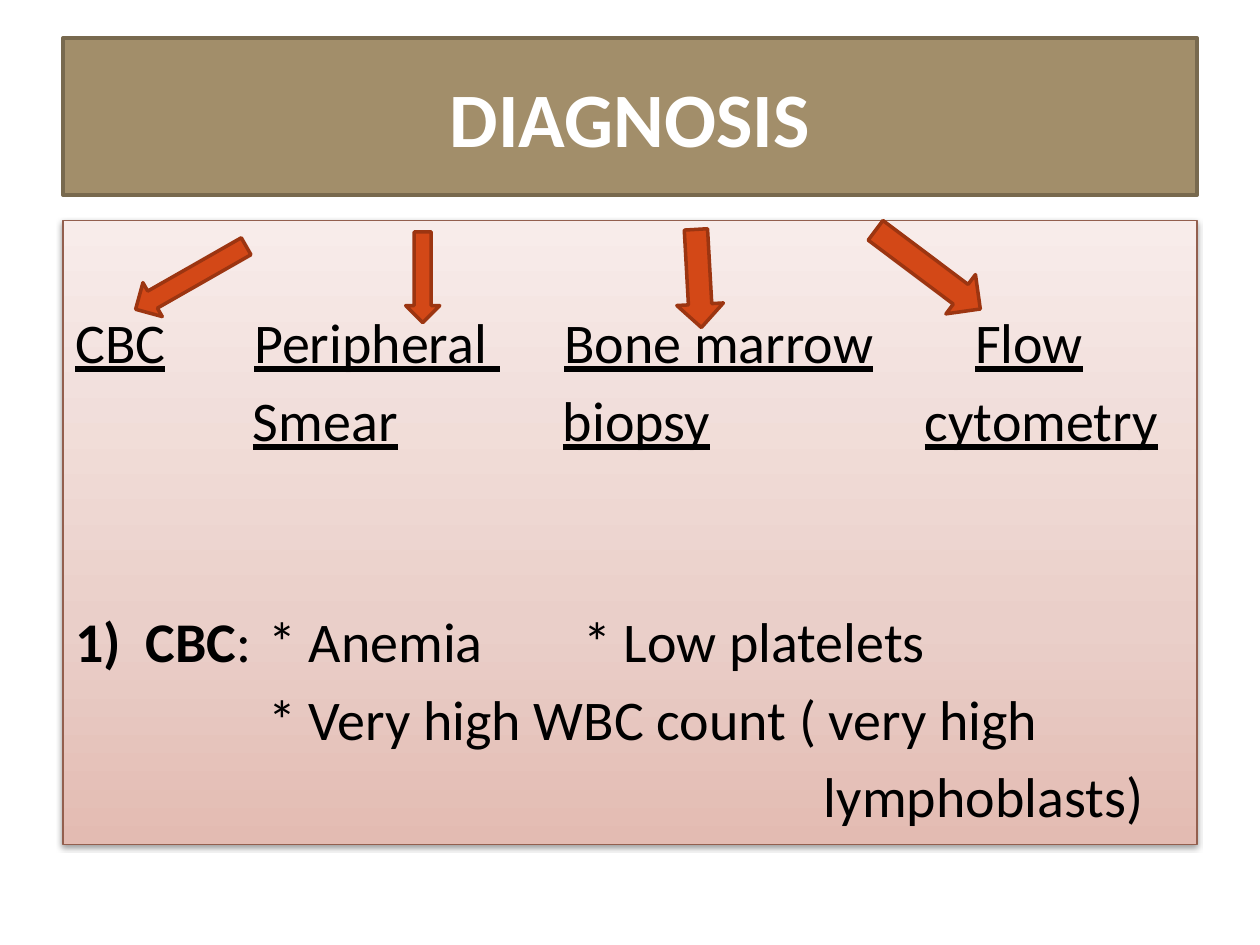
from lxml.etree import SubElement
from pptx import Presentation
from pptx.dml.color import RGBColor
from pptx.enum.shapes import MSO_SHAPE
from pptx.enum.text import MSO_ANCHOR, PP_ALIGN
from pptx.oxml.ns import qn
from pptx.util import Emu, Inches, Pt

TAN = RGBColor(0xA2, 0x8E, 0x6A)
BROWN = RGBColor(0x78, 0x69, 0x4E)
RUST = RGBColor(0x93, 0x5F, 0x4E)
ORANGE = RGBColor(0xD3, 0x48, 0x17)
BRICK = RGBColor(0x9C, 0x35, 0x11)
WHITE = RGBColor(0xFF, 0xFF, 0xFF)
BLACK = RGBColor(0, 0, 0)
BLUSH = [
    (0, RGBColor(0xE3, 0xBB, 0xB2)),
    (35, RGBColor(0xEA, 0xCF, 0xC9)),
    (100, RGBColor(0xF8, 0xEC, 0xEA)),
]
WIDE, HIGH = Inches(10), Inches(7.5)
LEFT, SPAN = 0.05, 0.9
GAP = 6
ARROWS = [
    (1.36, 1.7, 0.31, 1.01, 60.3),
    (3.22, 1.84, 0.27, 0.72, 0),
    (5.36, 1.82, 0.37, 0.78, 356.8),
    (7.17, 1.62, 0.39, 1.04, 306.9),
]
HEAD = {"underline": True}
BOLD = {"bold": True}
ROWS = [
    {"gap": 0, "tabs": [1.42, 3.88, 7.14], "look": HEAD,
     "cells": ["CBC", "Peripheral ", "Bone marrow", "Flow"]},
    {"gap": GAP, "tabs": [1.41, 3.87, 6.74], "look": HEAD,
     "cells": ["", "Smear", "biopsy", "cytometry"]},
    {"gap": 88, "tabs": [1.53, 4.03], "list": True, "lead": "CBC",
     "cells": [":", "* Anemia", "* Low platelets"]},
    {"gap": GAP, "tabs": [1.53],
     "cells": ["", "* Very high WBC count ( very high"]},
    {"gap": GAP, "tabs": [5.94], "cells": ["", "lymphoblasts)"]},
]


def style(item, form):
    """Set each attribute named in a dict of format values."""
    for name, value in form.items():
        setattr(item, name, value)


def place(shape, left, top, width, height):
    """Place a shape by shares of the slide's size."""
    style(shape, {
        "left": Emu(round(left * WIDE)), "top": Emu(round(top * HIGH)),
        "width": Emu(round(width * WIDE)), "height": Emu(round(height * HIGH)),
    })


def edge(shape, color, width):
    """Give a shape its outline."""
    shape.line.color.rgb = color
    shape.line.width = Pt(width)


def paint(shape, color):
    """Give a shape a plain fill."""
    shape.fill.solid()
    shape.fill.fore_color.rgb = color


def blend(shape, stops, angle):
    """Give a shape a gradient fill of several stops."""
    shape.fill.gradient()
    shape.fill.gradient_angle = angle
    holder = shape._element.spPr.find(qn("a:gradFill")).find(qn("a:gsLst"))
    for old in list(holder):
        holder.remove(old)
    for share, color in stops:
        stop = SubElement(holder, qn("a:gs"), pos=str(share * 1000))
        SubElement(stop, qn("a:srgbClr"), val=str(color))


def shade(shape):
    """Give a shape a soft shadow below it."""
    shape.shadow.inherit = False
    parent = shape._element.spPr.find(qn("a:effectLst"))
    cast = SubElement(parent, qn("a:outerShdw"), blurRad=str(Pt(3.1)),
                      dist=str(Pt(1.6)), dir="5400000", rotWithShape="0")
    color = SubElement(cast, qn("a:srgbClr"), val=str(BLACK))
    SubElement(color, qn("a:alpha"), val="38000")


def write(para, text, form):
    """Add a run of body text."""
    run = para.add_run()
    run.text = text
    style(run.font, {"name": "Calibri", "size": Pt(32), **form})
    run.font.color.rgb = BLACK


def fill_row(para, row):
    """Write a row of cells set apart by tab stops."""
    props = para._p.get_or_add_pPr()
    if row.get("list"):
        props.set("marL", str(Inches(0.56)))
        props.set("indent", str(-Inches(0.56)))
        SubElement(props, qn("a:buFont"), typeface="+mj-lt")
        SubElement(props, qn("a:buAutoNum"), type="arabicParenR")
    stops = SubElement(props, qn("a:tabLst"))
    for stop in row["tabs"]:
        SubElement(stops, qn("a:tab"), pos=str(Inches(stop)), algn="l")
    style(para, {"alignment": PP_ALIGN.LEFT, "space_before": Pt(row["gap"])})
    if "lead" in row:
        write(para, row["lead"], BOLD)
    for index, cell in enumerate(row["cells"]):
        if index:
            write(para, "\t", {})
        if cell:
            write(para, cell, row.get("look", {}))


def add_title(slide):
    """Format the title as a filled banner."""
    title = slide.shapes.title
    place(title, LEFT, 0.04, SPAN, 1 / 6)
    paint(title, TAN)
    edge(title, BROWN, 2)
    title.text_frame.text = "DIAGNOSIS"
    title.text_frame.vertical_anchor = MSO_ANCHOR.MIDDLE
    para = title.text_frame.paragraphs[0]
    para.alignment = PP_ALIGN.CENTER
    font = para.runs[0].font
    style(font, {"name": "Calibri", "size": Pt(44), "bold": True})
    font.color.rgb = WHITE


def add_panel(slide):
    """Add the shaded panel with the tests and findings."""
    panel = slide.shapes.add_shape(MSO_SHAPE.RECTANGLE, 0, 0, 0, 0)
    place(panel, LEFT, 7 / 30, SPAN, 0.66)
    blend(panel, BLUSH, 90)
    edge(panel, RUST, 0.75)
    shade(panel)
    frame = panel.text_frame
    style(frame, {"word_wrap": True, "vertical_anchor": MSO_ANCHOR.TOP,
                  "margin_top": Inches(0.69)})
    for index, row in enumerate(ROWS):
        fill_row(frame.add_paragraph() if index else frame.paragraphs[0], row)


def add_arrow(slide, left, top, width, height, turn):
    """Add a block arrow turned toward its test."""
    arrow = slide.shapes.add_shape(
        MSO_SHAPE.DOWN_ARROW, *map(Inches, (left, top, width, height)))
    arrow.rotation = turn
    arrow.shadow.inherit = False
    paint(arrow, ORANGE)
    edge(arrow, BRICK, 2)


def main():
    """Build and save the slide."""
    deck = Presentation()
    style(deck, {"slide_width": WIDE, "slide_height": HIGH})
    slide = deck.slides.add_slide(deck.slide_layouts[5])
    add_title(slide)
    add_panel(slide)
    for arrow in ARROWS:
        add_arrow(slide, *arrow)
    deck.save("out.pptx")


if __name__ == "__main__":
    main()
